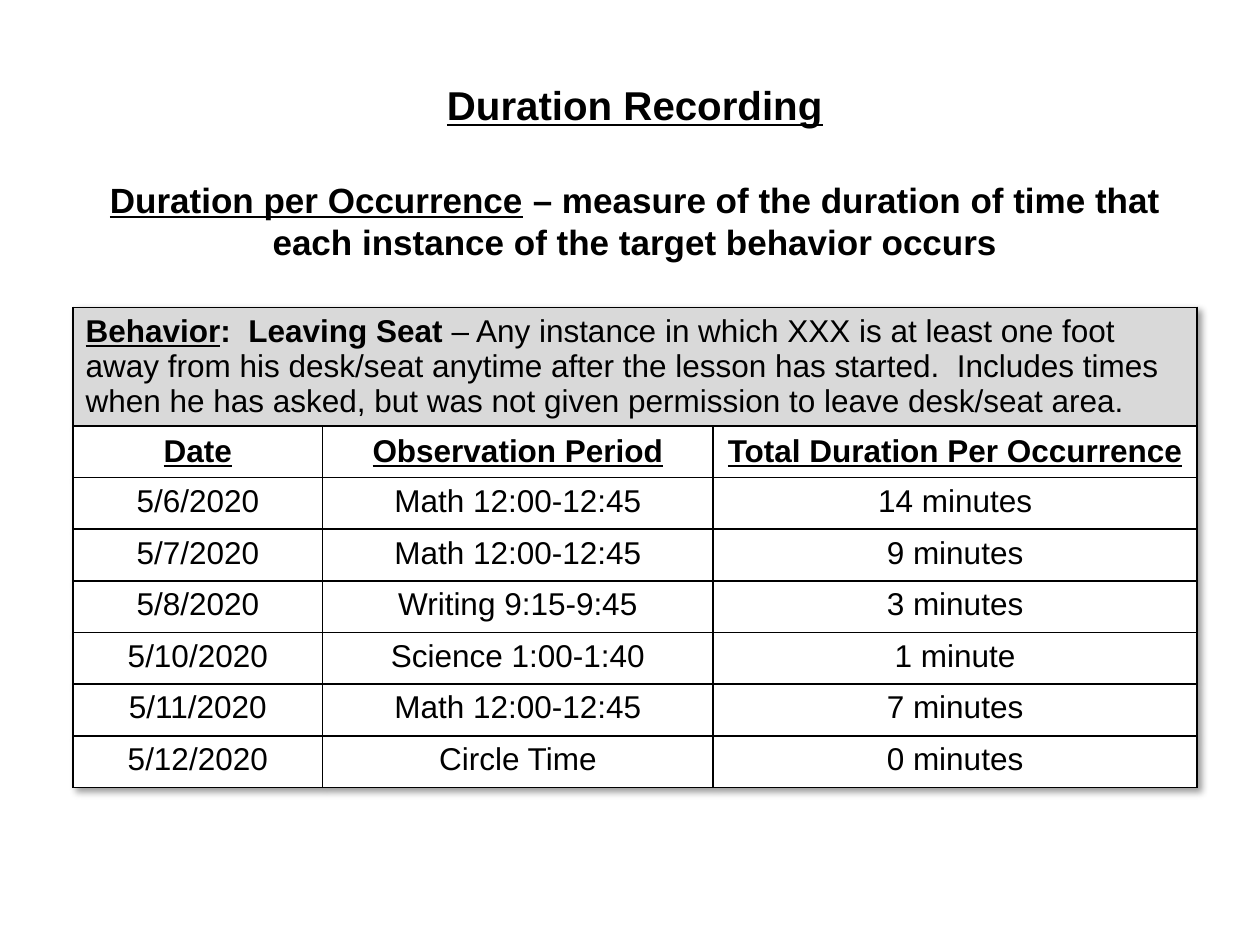
from dataclasses import dataclass
from lxml.etree import SubElement
from pptx import Presentation
from pptx.dml.color import RGBColor
from pptx.enum.text import MSO_ANCHOR, PP_ALIGN
from pptx.oxml import parse_xml
from pptx.oxml.ns import nsdecls, qn
from pptx.util import Inches, Pt


@dataclass(frozen=True)
class Theme:
    font: str = "Arial"
    ink: str = "000000"
    behavior_fill: str = "D9D9D9"
    cell_fill: str = "FFFFFF"
    heading: int = 23
    definition: int = 20
    table: int = 18
    border: int = 1


THEME = Theme()

# Content: runs are (text, bold, underline)
HEADING = [("Duration Recording", True, True)]
DEFINITION = [
    ("Duration per Occurrence", True, True),
    (" – measure of the duration of time that each instance of the target "
     "behavior occurs", True, False),
]
BEHAVIOR = [
    ("Behavior", True, True),
    (":  Leaving Seat", True, False),
    (" – Any instance in which XXX is at least one foot away from his desk/seat "
     "anytime after the lesson has started.  Includes times when he has asked, "
     "but was not given permission to leave desk/seat area.", False, False),
]
COLUMNS = ["Date", "Observation Period", "Total Duration Per Occurrence"]
OBSERVATIONS = [
    ("5/6/2020", "Math 12:00-12:45", "14 minutes"),
    ("5/7/2020", "Math 12:00-12:45", "9 minutes"),
    ("5/8/2020", "Writing 9:15-9:45", "3 minutes"),
    ("5/10/2020", "Science 1:00-1:40", "1 minute"),
    ("5/11/2020", "Math 12:00-12:45", "7 minutes"),
    ("5/12/2020", "Circle Time", "0 minutes"),
]

# Layout in inches
LEFT, WIDTH = 0.58, 8.92
TITLE_TOP, TITLE_HEIGHT = 0.58, 1.55
TABLE_TOP, BEHAVIOR_HEIGHT, ROW_HEIGHT = 2.44, 0.94, 0.41
COLUMN_WIDTHS = [1.98, 3.1, 3.84]


def write(paragraph, runs, size, align=PP_ALIGN.CENTER):
    paragraph.alignment = align
    for text, bold, underline in runs:
        run = paragraph.add_run()
        run.text = text
        font = run.font
        font.name, font.size = THEME.font, Pt(size)
        font.bold, font.underline = bold, underline
        font.color.rgb = RGBColor.from_string(THEME.ink)


def add_borders(cell):
    properties = cell._tc.get_or_add_tcPr()
    for position, side in enumerate(("a:lnL", "a:lnR", "a:lnT", "a:lnB")):
        line = parse_xml(f'<{side} {nsdecls("a")} w="{Pt(THEME.border)}"/>')
        fill = SubElement(line, qn("a:solidFill"))
        SubElement(fill, qn("a:srgbClr"), val=THEME.ink)
        properties.insert(position, line)


def style_cell(cell, color, anchor):
    cell.fill.solid()
    cell.fill.fore_color.rgb = RGBColor.from_string(color)
    cell.vertical_anchor = anchor
    add_borders(cell)


def add_title(slide):
    title = slide.shapes.title
    title.left, title.top = Inches(LEFT), Inches(TITLE_TOP)
    title.width, title.height = Inches(WIDTH), Inches(TITLE_HEIGHT)
    frame = title.text_frame
    frame.word_wrap = True
    frame.vertical_anchor = MSO_ANCHOR.BOTTOM
    write(frame.paragraphs[0], HEADING, THEME.heading)
    definition = frame.add_paragraph()
    definition.space_before = Pt(28)
    write(definition, DEFINITION, THEME.definition)


def add_observation_table(slide):
    row_count = len(OBSERVATIONS) + 2
    height = BEHAVIOR_HEIGHT + ROW_HEIGHT * (row_count - 1)
    table = slide.shapes.add_table(
        row_count, len(COLUMNS), Inches(LEFT), Inches(TABLE_TOP),
        Inches(WIDTH), Inches(height)).table
    table.first_row = table.horz_banding = False
    for column, width in zip(table.columns, COLUMN_WIDTHS):
        column.width = Inches(width)
    for index, row in enumerate(table.rows):
        row.height = Inches(ROW_HEIGHT if index else BEHAVIOR_HEIGHT)

    # Soft shadow around the table
    table._tbl.tblPr.insert(0, parse_xml(
        f'<a:effectLst {nsdecls("a")}><a:outerShdw blurRad="50800" dist="38100" '
        'dir="2700000" algn="tl" rotWithShape="0"><a:srgbClr val="000000">'
        '<a:alpha val="40000"/></a:srgbClr></a:outerShdw></a:effectLst>'))

    # Behavior definition across the full width
    behavior = table.cell(0, 0)
    behavior.merge(table.cell(0, len(COLUMNS) - 1))
    for cell in table.rows[0].cells:
        style_cell(cell, THEME.behavior_fill, MSO_ANCHOR.TOP)
    write(behavior.text_frame.paragraphs[0], BEHAVIOR, THEME.table, PP_ALIGN.LEFT)

    # Column headings and observations
    for row, values in enumerate([COLUMNS, *OBSERVATIONS], start=1):
        is_heading = row == 1
        anchor = MSO_ANCHOR.MIDDLE if is_heading else MSO_ANCHOR.TOP
        for column, value in enumerate(values):
            cell = table.cell(row, column)
            style_cell(cell, THEME.cell_fill, anchor)
            write(cell.text_frame.paragraphs[0],
                  [(value, is_heading, is_heading)], THEME.table)


def main():
    deck = Presentation()
    deck.slide_width, deck.slide_height = Inches(10), Inches(7.5)
    slide = deck.slides.add_slide(deck.slide_layouts[5])
    add_title(slide)
    add_observation_table(slide)
    deck.save("out.pptx")


if __name__ == "__main__":
    main()
